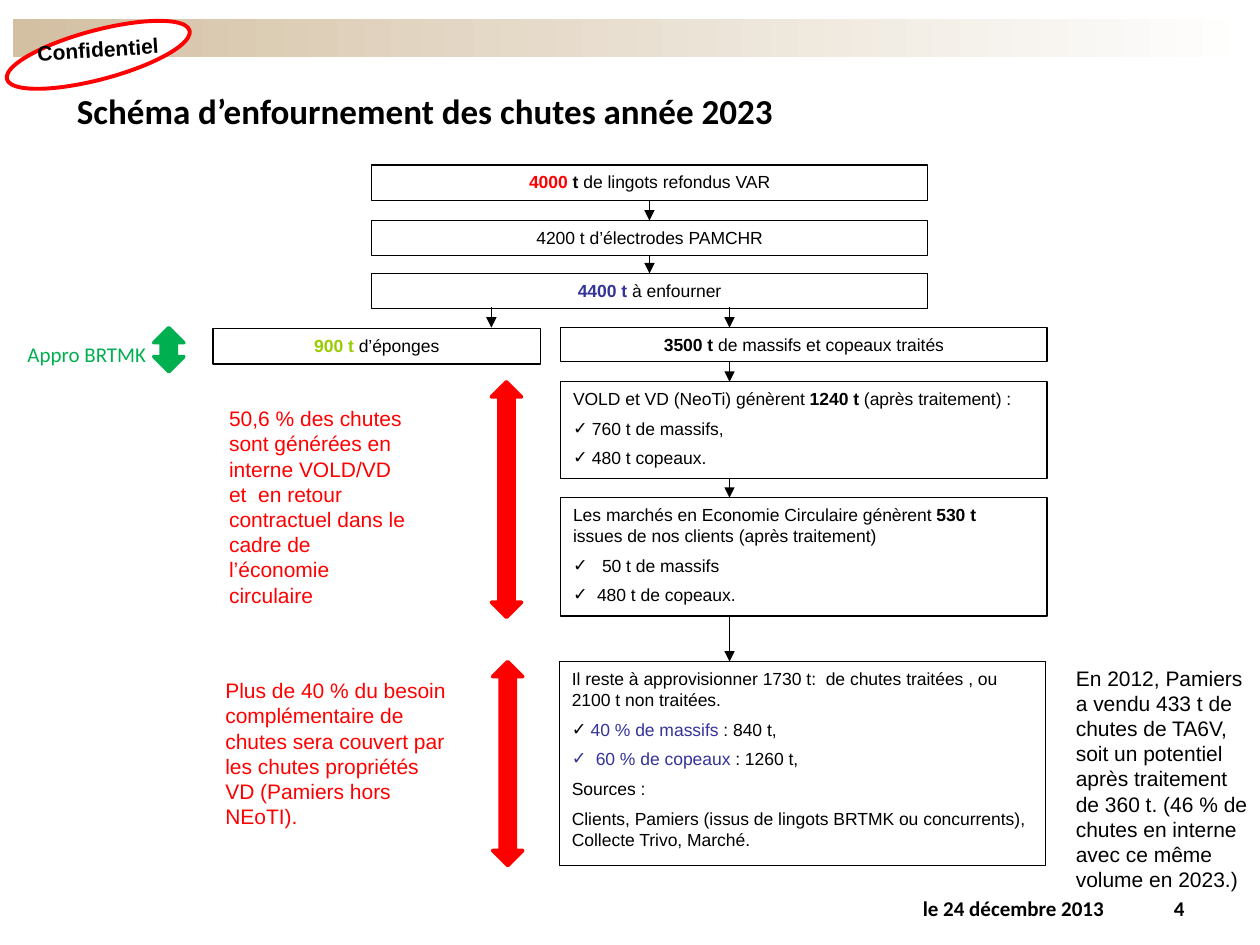
from lxml.etree import SubElement
from pptx import Presentation
from pptx.dml.color import RGBColor
from pptx.enum.shapes import MSO_CONNECTOR as Connector, MSO_SHAPE as Shape
from pptx.enum.text import MSO_ANCHOR as Anchor, PP_ALIGN as Align
from pptx.oxml.ns import qn
from pptx.util import Inches, Pt

BLACK = RGBColor(0x00, 0x00, 0x00)
WHITE = RGBColor(0xFF, 0xFF, 0xFF)
RED = RGBColor(0xFF, 0x00, 0x00)
GREEN = RGBColor(0x00, 0xB0, 0x50)
LIME = RGBColor(0x99, 0xCC, 0x00)
INDIGO = RGBColor(0x33, 0x33, 0x99)
SAND = RGBColor(0xD3, 0xC0, 0xA3)

COLUMNS, ROWS = 100, 75
WIDTH, HEIGHT = Inches(10), Inches(7.5)
BOX_TEXT = {"name": "Arial", "size": Pt(10), "bold": False, "color": BLACK}
NOTE_TEXT = {**BOX_TEXT, "size": Pt(12)}
LABEL_TEXT = {**NOTE_TEXT, "name": "Calibri"}
BOLD = {"bold": True}
BLUE = {"color": INDIGO}


def across(columns):
    """Turn grid columns into a length."""
    return round(WIDTH * columns / COLUMNS)


def down(rows):
    """Turn grid rows into a length."""
    return round(HEIGHT * rows / ROWS)


def cell(left, top, width, height):
    """Turn a grid area into left, top, width and height."""
    return across(left), down(top), across(width), down(height)


def style_run(run, style):
    """Apply a dict of font values to a run."""
    for attribute, value in style.items():
        if attribute == "color":
            run.font.color.rgb = value
        else:
            setattr(run.font, attribute, value)


def add_tick(paragraph, indent, color):
    """Give a paragraph a hanging check-mark bullet."""
    properties = paragraph._p.get_or_add_pPr()
    properties.set("marL", str(Inches(indent)))
    properties.set("indent", str(-Inches(indent)))
    bullet_color = SubElement(properties, qn("a:buClr"))
    SubElement(bullet_color, qn("a:srgbClr"), val=str(color))
    SubElement(properties, qn("a:buFont"), typeface="Arial")
    SubElement(properties, qn("a:buChar"), char="✓")


def write(frame, paragraphs, base, align=Align.LEFT, anchor=Anchor.TOP, wrap=True):
    """Fill a text frame with paragraphs of (runs, tick) pairs."""
    frame.word_wrap, frame.vertical_anchor = wrap, anchor
    for index, (runs, tick) in enumerate(paragraphs):
        paragraph = frame.add_paragraph() if index else frame.paragraphs[0]
        paragraph.alignment = align
        if index:
            paragraph.space_before = Pt(5)
        if tick:
            add_tick(paragraph, *tick)
        for text, style in runs:
            run = paragraph.add_run()
            run.text = text
            style_run(run, {**base, **style})


def plain(text, **style):
    """Describe a paragraph of a single run."""
    return [(text, style)], None


def add_outline(slide, kind, area, fill, line, width):
    """Add a preset shape with a fill and a line."""
    outline = slide.shapes.add_shape(kind, *cell(*area))
    outline.shadow.inherit = False
    if fill is None:
        outline.fill.background()
    else:
        outline.fill.solid()
        outline.fill.fore_color.rgb = fill
    outline.line.color.rgb = line
    outline.line.width = Pt(width)
    return outline


def add_step(slide, area, paragraphs, align=Align.LEFT):
    """Add a framed step of the flow."""
    step = add_outline(slide, Shape.RECTANGLE, area, None, BLACK, 0.75)
    write(step.text_frame, paragraphs, BOX_TEXT, align)
    return step


def add_note(slide, area, text, style, align=Align.LEFT, wrap=True):
    """Add a free-standing text."""
    note = slide.shapes.add_textbox(*cell(*area))
    write(note.text_frame, [plain(text)], style, align, wrap=wrap)
    return note


def add_flow(slide, column, start, end):
    """Add a vertical arrow between two rows."""
    flow = slide.shapes.add_connector(
        Connector.STRAIGHT, across(column), down(start), across(column), down(end))
    flow.line.color.rgb = BLACK
    flow.line.width = Pt(0.75)
    SubElement(flow.line._get_or_add_ln(), qn("a:tailEnd"), type="triangle")
    SubElement(flow._element.spPr, qn("a:effectLst"))
    return flow


def add_banner(slide):
    """Add the fading band and the confidentiality stamp."""
    band = slide.shapes.add_shape(Shape.RECTANGLE, *cell(1, 1.5, 98.8, 3))
    band.shadow.inherit = False
    band.line.fill.background()
    band.fill.gradient()
    band.fill.gradient_angle = 0
    for stop, color in zip(band.fill.gradient_stops, (SAND, WHITE)):
        stop.color.rgb = color
    stamp = add_outline(slide, Shape.OVAL, (0.3, 2.4, 15, 3.9), WHITE, RED, 2.25)
    stamp.rotation = 345.1
    mention = add_note(slide, (0.8, 2.4, 14, 3.7), "Confidentiel",
                       {**NOTE_TEXT, **BOLD}, Align.CENTER)
    mention.rotation = 356.3


def add_title(slide, text):
    """Place and fill the title placeholder."""
    title = slide.shapes.title
    title.left, title.top, title.width, title.height = cell(5.1, 5.2, 90, 7.1)
    write(title.text_frame, [plain(text)],
          {**LABEL_TEXT, "size": Pt(20), "bold": True}, anchor=Anchor.MIDDLE)


def add_steps(slide):
    """Add the framed steps and the arrows that link them."""
    totals = [
        (13.1, [("4000 ", {"bold": True, "color": RED}), ("t ", BOLD),
                ("de lingots refondus VAR", {})]),
        (17.5, [("4200 t d’électrodes PAMCHR", {})]),
        (21.7, [("4400 t ", {**BOLD, **BLUE}), ("à enfourner", {})]),
    ]
    chain = [add_step(slide, (29.5, top, 44.1, 2.8), [(runs, None)], Align.CENTER)
             for top, runs in totals]
    for upper, lower in zip(chain, chain[1:]):
        link = add_flow(slide, 51.6, 15.9, 17.5)
        link.begin_connect(upper, 2)
        link.end_connect(lower, 0)

    add_step(slide, (16.9, 26.1, 26, 2.8),
             [([("900 t ", {"bold": True, "color": LIME}), ("d’éponges", {})], None)],
             Align.CENTER)
    add_step(slide, (44.5, 26, 38.6, 2.7),
             [([("3500 t ", BOLD), ("de massifs et copeaux traités", {})], None)],
             Align.CENTER)
    add_step(slide, (44.5, 30.3, 38.6, 7.7), [
        ([("VOLD et VD (NeoTi) génèrent ", {}), ("1240 t ", BOLD),
          ("(après traitement) :", {})], None),
        ([("760 t de massifs,", {})], (0.15, BLACK)),
        ([("480 t copeaux.", {})], (0.15, BLACK)),
    ])
    add_step(slide, (44.5, 39.5, 38.6, 9.4), [
        ([("Les marchés en Economie Circulaire génèrent ", {}), ("530 t  ", BOLD),
          ("issues de nos clients (après traitement)", {})], None),
        ([("50 t de massifs", {})], (0.23, BLACK)),
        ([("480 t de copeaux.", {})], (0.19, BLACK)),
    ])
    add_step(slide, (44.4, 52.5, 38.6, 16.2), [
        plain("Il reste à approvisionner 1730 t:  de chutes traitées , "
              "ou 2100 t non traitées."),
        ([("40 % de massifs", BLUE), (" : 840 t,", {})], (0.15, BLACK)),
        ([("60 % de copeaux", BLUE), (" : 1260 t,", {})], (0.19, INDIGO)),
        plain("Sources :"),
        plain("Clients, Pamiers (issus de lingots BRTMK ou concurrents), "
              "Collecte Trivo, Marché."),
    ])
    for column, start, end in ((39, 24.4, 26), (57.9, 24.4, 26), (57.9, 28.7, 30.3),
                               (57.9, 38, 39.5), (57.9, 48.9, 52.5)):
        add_flow(slide, column, start, end)


def add_comments(slide):
    """Add the side comments and their double arrows."""
    add_note(slide, (17.2, 31.7, 16.3, 17.2),
             "50,6 % des chutes sont générées en interne VOLD/VD et  en retour "
             "contractuel dans le cadre de l’économie circulaire",
             {**NOTE_TEXT, "color": RED})
    add_note(slide, (16.9, 53.3, 19.7, 13.1),
             "Plus de 40 % du besoin complémentaire de chutes sera couvert par "
             "les chutes propriétés VD (Pamiers hors NEoTI).",
             {**NOTE_TEXT, "color": RED})
    add_note(slide, (84.4, 52.3, 15.6, 19.2),
             "En 2012, Pamiers a vendu 433 t de chutes de TA6V, soit un potentiel "
             "après traitement de 360 t. (46 % de chutes en interne avec ce même "
             "volume en 2023.)", NOTE_TEXT)
    add_note(slide, (1.2, 26.6, 11.7, 3), "Appro BRTMK",
             {**LABEL_TEXT, "color": GREEN}, wrap=False)
    for left, top, height, color in ((39, 30.3, 18.7, RED), (39.1, 52.5, 16.2, RED),
                                     (12.2, 26, 3.5, GREEN)):
        add_outline(slide, Shape.UP_DOWN_ARROW, (left, top, 2.4, height), color, color, 2)


def add_footer(slide):
    """Add the date and the page number."""
    for left, width, text in ((56.9, 31.7, "le 24 décembre 2013"), (88.6, 6.4, "4")):
        add_note(slide, (left, 70.6, width, 2.9), text, {**LABEL_TEXT, **BOLD}, Align.RIGHT)


def main():
    """Build the slide and save it."""
    deck = Presentation()
    deck.slide_width, deck.slide_height = WIDTH, HEIGHT
    slide = deck.slides.add_slide(deck.slide_layouts[5])
    add_banner(slide)
    add_title(slide, "Schéma d’enfournement des chutes année 2023")
    add_steps(slide)
    add_comments(slide)
    add_footer(slide)
    deck.save("out.pptx")


if __name__ == "__main__":
    main()
